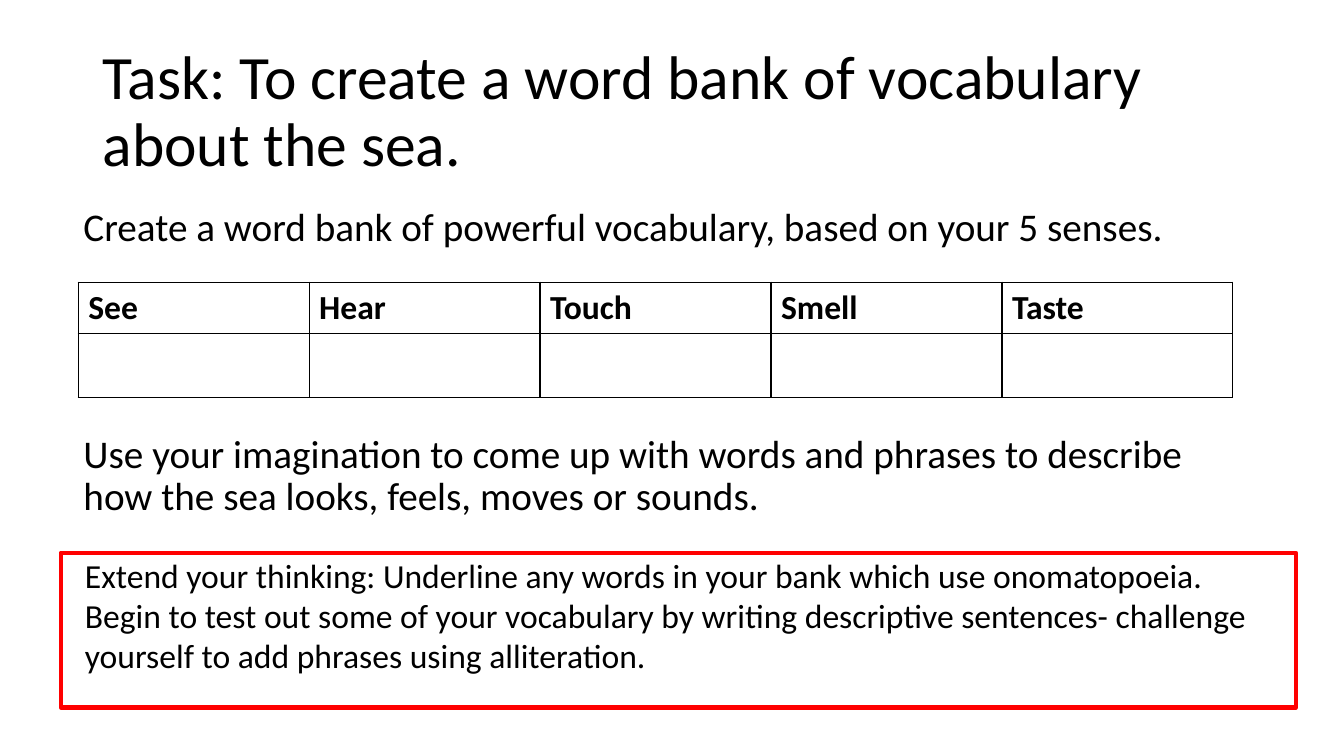
"""Builds a slide that sets the task of making a sea word bank."""
from lxml import etree
from pptx import Presentation
from pptx.dml.color import RGBColor
from pptx.enum.shapes import MSO_SHAPE
from pptx.enum.text import MSO_ANCHOR, MSO_AUTO_SIZE, PP_ALIGN
from pptx.oxml.ns import qn
from pptx.util import Cm, Pt

BLACK = RGBColor(0x00, 0x00, 0x00)
RED = RGBColor(0xFF, 0x00, 0x00)
RECTANGLE = MSO_SHAPE.RECTANGLE
TOP, MIDDLE = MSO_ANCHOR.TOP, MSO_ANCHOR.MIDDLE
NO_FIT, GROW = MSO_AUTO_SIZE.NONE, MSO_AUTO_SIZE.SHAPE_TO_FIT_TEXT
LEFT = PP_ALIGN.LEFT

SENSES = ["See", "Hear", "Touch", "Smell", "Taste"]


def write(paragraph, text, *, size, font="Calibri", color=BLACK, bold=False,
          line_spacing=1.0, before=0):
    paragraph.alignment = LEFT
    paragraph.line_spacing = line_spacing
    paragraph.space_before = Pt(before)
    run = paragraph.add_run()
    run.text = text
    run.font.name = font
    run.font.size = Pt(size)
    run.font.bold = bold
    run.font.color.rgb = color


class TaskSlide:
    def __init__(self, deck, title_size=44, body_size=28, small_size=24):
        self.slide = deck.slides.add_slide(deck.slide_layouts[1])
        self.title_size = title_size
        self.body_size = body_size
        self.small_size = small_size

    def place(self, placeholder, left, top, width, height, anchor):
        placeholder.left, placeholder.top = Cm(left), Cm(top)
        placeholder.width, placeholder.height = Cm(width), Cm(height)
        frame = placeholder.text_frame
        frame.auto_size = NO_FIT
        frame.word_wrap = True
        frame.vertical_anchor = anchor
        return frame

    def title(self, text, *box):
        frame = self.place(self.slide.shapes.title, *box, MIDDLE)
        write(frame.paragraphs[0], text, size=self.title_size, line_spacing=0.9)

    def body(self, instructions, *box):
        frame = self.place(self.slide.placeholders[1], *box, TOP)
        for index, (text, before) in enumerate(instructions):
            paragraph = frame.add_paragraph() if index else frame.paragraphs[0]
            write(paragraph, text, size=self.body_size, line_spacing=0.9, before=before)
            properties = paragraph._p.get_or_add_pPr()
            properties.set("marL", "0")
            properties.set("indent", "0")
            etree.SubElement(properties, qn("a:buNone"))

    def word_bank(self, headings, left, top, column_width, row_heights):
        bank = self.slide.shapes.add_table(
            len(row_heights), len(headings), Cm(left), Cm(top),
            Cm(column_width * len(headings)), Cm(sum(row_heights))).table
        bank.first_row = bank.horz_banding = False
        for column in bank.columns:
            column.width = Cm(column_width)
        for row, height in zip(bank.rows, row_heights):
            row.height = Cm(height)
        for cell in bank.iter_cells():
            cell.fill.background()
            self.border(cell)
        for column, heading in enumerate(headings):
            write(bank.cell(0, column).text_frame.paragraphs[0], heading,
                  size=self.small_size, bold=True)

    def border(self, cell, color=BLACK, width=1):
        properties = cell._tc.get_or_add_tcPr()
        for position, side in enumerate(("lnL", "lnR", "lnT", "lnB")):
            line = etree.Element(qn(f"a:{side}"), w=str(Pt(width)))
            fill = etree.SubElement(line, qn("a:solidFill"))
            etree.SubElement(fill, qn("a:srgbClr"), val=str(color))
            properties.insert(position, line)

    def note(self, text, *box):
        frame = self.slide.shapes.add_textbox(*map(Cm, box)).text_frame
        frame.word_wrap = True
        frame.auto_size = GROW
        write(frame.paragraphs[0], text, size=self.small_size)

    def outline(self, *box, color=RED, width=3):
        rectangle = self.slide.shapes.add_shape(RECTANGLE, *map(Cm, box))
        rectangle.shadow.inherit = False
        rectangle.fill.background()
        rectangle.line.color.rgb = color
        rectangle.line.width = Pt(width)


def main():
    deck = Presentation()
    deck.slide_width, deck.slide_height = Cm(33.87), Cm(19.05)
    task = TaskSlide(deck)
    task.title("Task: To create a word bank of vocabulary about the sea.",
               2.33, 1.01, 29.21, 3.68)
    task.body([
        ("Create a word bank of powerful vocabulary, based on your 5 senses.", 10),
        ("Use your imagination to come up with words and phrases to describe "
         "how the sea looks, feels, moves or sounds.", 132),
    ], 1.85, 5.1, 29.21, 12.1)
    task.word_bank(SENSES, 1.97, 7.11, 5.82, [1.28, 1.61])
    task.note("Extend your thinking: Underline any words in your bank which use "
              "onomatopoeia. Begin to test out some of your vocabulary by writing "
              "descriptive sentences- challenge yourself to add phrases using "
              "alliteration.", 1.89, 13.85, 30.25, 3.33)
    task.outline(1.53, 13.93, 31.13, 3.9)
    deck.save("out.pptx")


if __name__ == "__main__":
    main()
